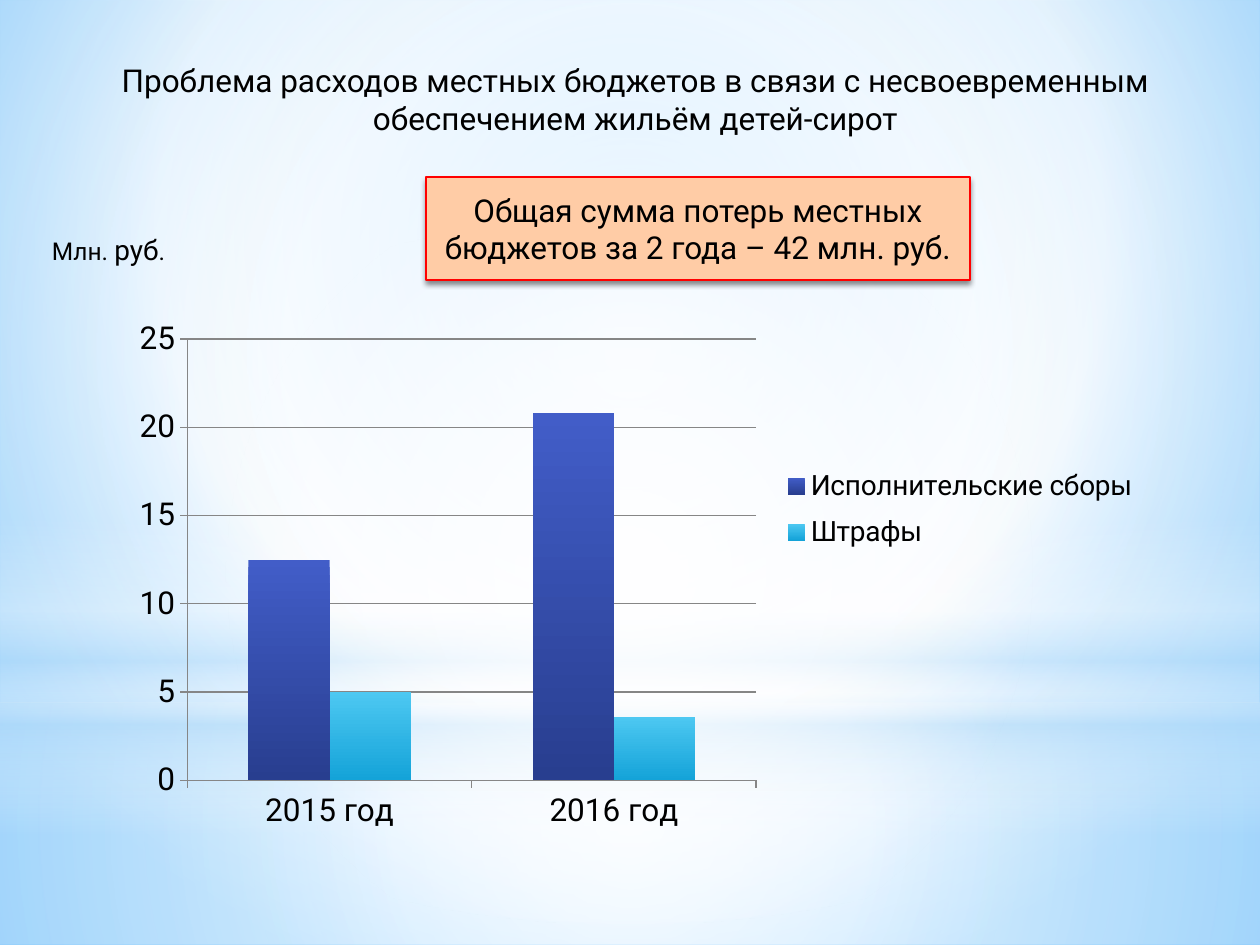
from dataclasses import dataclass

from pptx import Presentation, util as u
from pptx.chart import data as chart_data
from pptx.dml.color import RGBColor
from pptx.enum import chart as charts, shapes, text
from pptx.oxml import parse_xml
from pptx.oxml.ns import nsdecls, qn

SCALE = 914400 / 126


def px(length):
    return u.Emu(round(length * SCALE))


@dataclass
class Theme:
    font: str = "Roboto"
    ink: str = "000000"
    white: str = "FFFFFF"
    sky: str = "B4DCFA"
    sky_light: str = "9ED5FF"
    sky_deep: str = "5BB9FF"
    callout: str = "FFCCA6"
    callout_line: str = "FF0000"
    axis: str = "868686"
    fees: tuple = ("425DC8", "283E8F")
    fines: tuple = ("4DC8F2", "14A3D8")
    body: int = 18
    legend: int = 16
    unit: int = 14


class Slide:
    def __init__(self, deck, theme):
        self.theme = theme
        self.page = deck.slides.add_slide(deck.slide_layouts[6])

    def paint(self, fill, element, stops, focus=None):
        fill.gradient()
        marks = "".join(
            f'<a:gs pos="{place * 1000}"><a:srgbClr val="{color}">'
            f'<a:alpha val="{alpha * 1000}"/></a:srgbClr></a:gs>'
            for place, color, alpha in stops
        )
        if focus:
            sides = " ".join(f'{side}="{value * 1000}"' for side, value in zip("ltrb", focus))
            course = f'<a:path path="circle"><a:fillToRect {sides}/></a:path>'
        else:
            course = '<a:lin ang="5400000" scaled="0"/>'
        old = element.find(".//" + qn("a:gradFill"))
        old.getparent().replace(old, parse_xml(
            f'<a:gradFill {nsdecls("a")} rotWithShape="1">'
            f"<a:gsLst>{marks}</a:gsLst>{course}</a:gradFill>"))

    def background(self, stops, focus):
        self.paint(self.page.background.fill, self.page.element, stops, focus)

    def glow(self, kind, area, stops, focus=None):
        shape = self.page.shapes.add_shape(kind, *map(px, area))
        shape.shadow.inherit = False
        shape.line.fill.background()
        self.paint(shape.fill, shape.element, stops, focus)

    def shadow(self, blur, distance, alpha):
        return parse_xml(
            f'<a:effectLst {nsdecls("a")}><a:outerShdw blurRad="{u.Pt(blur)}" '
            f'dist="{u.Pt(distance)}" dir="5400000" algn="t" rotWithShape="0">'
            f'<a:srgbClr val="{self.theme.ink}"><a:alpha val="{alpha * 1000}"/>'
            "</a:srgbClr></a:outerShdw></a:effectLst>")

    def style(self, font, size):
        font.name = self.theme.font
        font.size = u.Pt(size)
        font.color.rgb = RGBColor.from_string(self.theme.ink)

    def add_spans(self, frame, spans):
        frame.word_wrap = True
        frame.vertical_anchor = text.MSO_ANCHOR.MIDDLE
        frame.margin_left = frame.margin_right = 0
        frame.margin_top = frame.margin_bottom = 0
        para = frame.paragraphs[0]
        para.alignment = text.PP_ALIGN.CENTER
        for words, size in spans:
            span = para.add_run()
            span.text = words
            self.style(span.font, size)

    def label(self, area, spans):
        box = self.page.shapes.add_textbox(*map(px, area))
        self.add_spans(box.text_frame, spans)
        for color in box.element.findall(".//" + qn("a:rPr") + "/" + qn("a:solidFill")):
            color.addnext(self.shadow(3, 3, 45))

    def callout(self, area, spans):
        box = self.page.shapes.add_shape(shapes.MSO_SHAPE.RECTANGLE, *map(px, area))
        box.shadow.inherit = False
        effects = box.element.find(".//" + qn("a:effectLst"))
        effects.getparent().replace(effects, self.shadow(3.1, 1.8, 45))
        box.fill.solid()
        box.fill.fore_color.rgb = RGBColor.from_string(self.theme.callout)
        box.line.color.rgb = RGBColor.from_string(self.theme.callout_line)
        box.line.width = u.Pt(0.75)
        self.add_spans(box.text_frame, spans)

    def place(self, parent, index, bounds, inner=False):
        for old in parent.findall(qn("c:layout")):
            parent.remove(old)
        target = '<c:layoutTarget val="inner"/>' if inner else ""
        modes = '<c:xMode val="edge"/><c:yMode val="edge"/>'
        sizes = "".join(f'<c:{name} val="{value}"/>' for name, value in zip("xywh", bounds))
        parent.insert(index, parse_xml(
            f'<c:layout {nsdecls("c")}><c:manualLayout>{target}{modes}{sizes}'
            "</c:manualLayout></c:layout>"))

    def columns(self, area, categories, series):
        table = chart_data.CategoryChartData()
        table.categories = categories
        for name, values, _ in series:
            table.add_series(name, values)
        chart = self.page.shapes.add_chart(
            charts.XL_CHART_TYPE.COLUMN_CLUSTERED, *map(px, area), table).chart
        self.style(chart.font, self.theme.body)
        chart.has_title = False
        chart.has_legend = True
        chart.legend.position = charts.XL_LEGEND_POSITION.RIGHT
        chart.legend.include_in_layout = False
        self.style(chart.legend.font, self.theme.legend)
        plot = chart.plots[0]
        plot.vary_by_categories = False
        plot.gap_width = 150
        plot.overlap = 0
        for bars, (_, _, colors) in zip(plot.series, series):
            fill = bars.format.fill
            fill.gradient()
            fill.gradient_angle = 270
            for stop, color in zip(fill.gradient_stops, colors):
                stop.color.rgb = RGBColor.from_string(color)
        value_axis = chart.value_axis
        value_axis.minimum_scale, value_axis.maximum_scale = 0, 25
        value_axis.major_unit = 5
        value_axis.has_major_gridlines = True
        gray = RGBColor.from_string(self.theme.axis)
        value_axis.major_gridlines.format.line.color.rgb = gray
        for axis in (chart.category_axis, value_axis):
            axis.major_tick_mark = charts.XL_TICK_MARK.OUTSIDE
            axis.format.line.color.rgb = gray
        root = chart.font and chart.element
        self.place(root.find(".//" + qn("c:plotArea")), 0,
                   (0.09, 0.06, 0.53, 0.83), inner=True)
        self.place(root.find(".//" + qn("c:legend")), 1, (0.63, 0.28, 0.36, 0.2))


def main():
    deck = Presentation()
    deck.slide_width, deck.slide_height = px(1260), px(945)
    theme = Theme()
    slide = Slide(deck, theme)
    white, sky = theme.white, theme.sky
    center = (50, 50, 50, 50)
    rectangle, ellipse = shapes.MSO_SHAPE.RECTANGLE, shapes.MSO_SHAPE.OVAL

    slide.background([(0, theme.sky_light, 100), (60, white, 100), (100, theme.sky_deep, 100)],
                     (20, 10, 20, 60))
    slide.glow(rectangle, (0, 703, 1260, 242),
               [(0, white, 91), (37, white, 76), (100, sky, 79)], center)
    slide.glow(rectangle, (0, 0, 1260, 703),
               [(0, white, 89), (48, white, 62), (100, sky, 79)], center)
    slide.glow(rectangle, (0, 519, 1260, 315),
               [(0, white, 0), (29, white, 30), (45, sky, 40),
                (55, white, 26), (65, sky, 60), (100, white, 0)])
    slide.glow(ellipse, (0, 221, 1260, 703), [(0, white, 100), (56, white, 0)], center)

    slide.label((58, 48, 1155, 102), [
        ("Проблема расходов местных бюджетов в связи с несвоевременным "
         "обеспечением жильём детей-сирот", theme.body)])
    slide.columns((91, 307, 1073, 532), ["2015 год", "2016 год"], [
        ("Исполнительские сборы", (12.5, 20.8), theme.fees),
        ("Штрафы", (5, 3.6), theme.fines)])
    slide.label((38, 229, 141, 40), [
        ("Млн. ", theme.unit), ("руб", theme.legend), (".", theme.unit)])
    slide.callout((426, 177, 544, 103), [
        ("Общая сумма потерь местных бюджетов за 2 года – 42 млн. руб.", theme.body)])
    deck.save("out.pptx")


if __name__ == "__main__":
    main()
